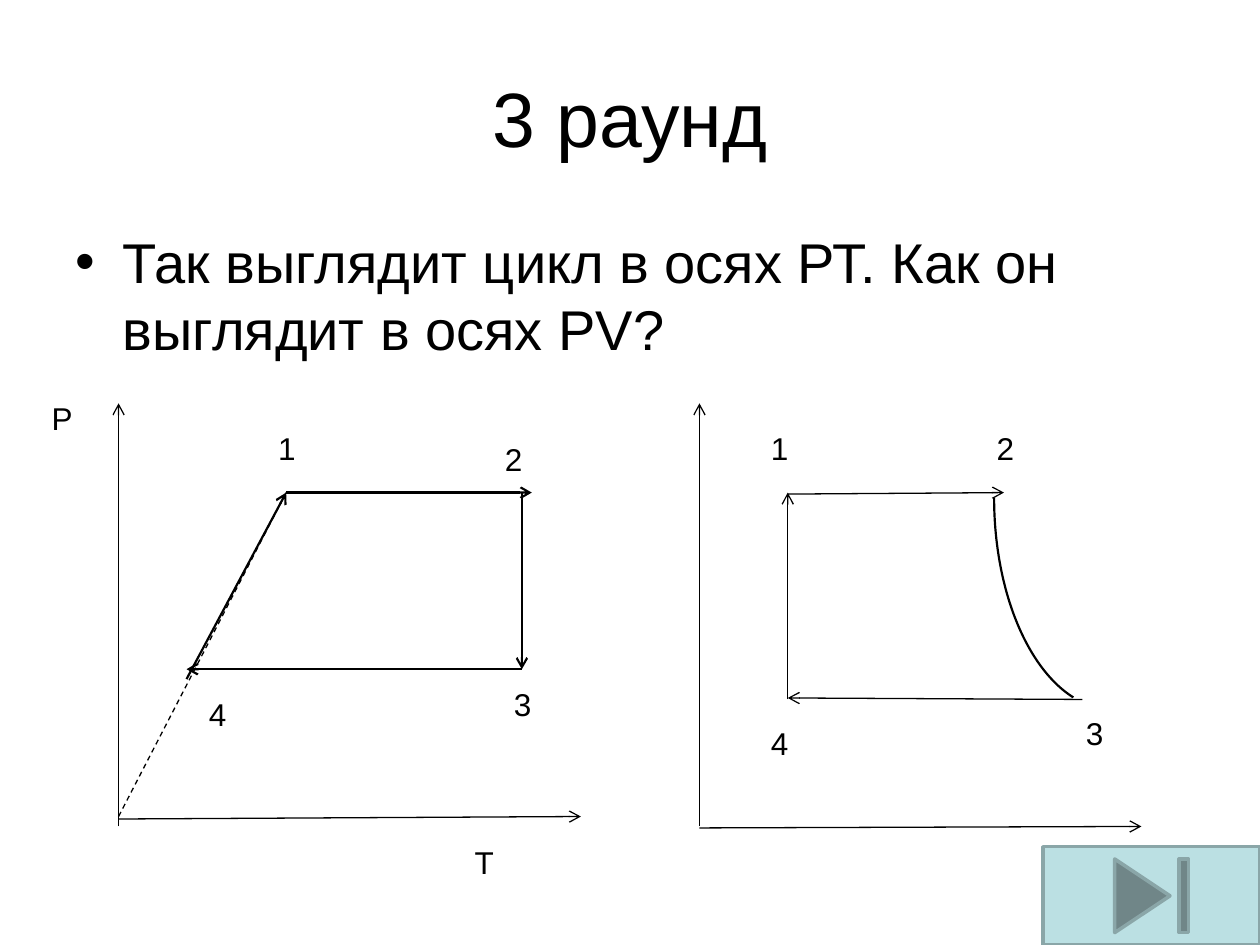
from lxml import etree
from pptx import Presentation
from pptx.dml.color import RGBColor
from pptx.enum.dml import MSO_LINE
from pptx.enum.shapes import MSO_CONNECTOR, MSO_SHAPE
from pptx.enum.text import MSO_ANCHOR, PP_ALIGN
from pptx.oxml.ns import qn
from pptx.util import Cm, Pt

STRAIGHT, DASH = MSO_CONNECTOR.STRAIGHT, MSO_LINE.DASH
ARC, BUTTON_END = MSO_SHAPE.ARC, MSO_SHAPE.ACTION_BUTTON_END
MIDDLE, TOP = MSO_ANCHOR.MIDDLE, MSO_ANCHOR.TOP
CENTER, LEFT = PP_ALIGN.CENTER, PP_ALIGN.LEFT

COLORS = {"ink": "000000", "button": "BBE0E3", "button_line": "8AA6A8"}
THIN, THICK = 0.75, 1.25

# Content, lengths in cm
TITLE = "3 раунд"
QUESTION = "Так выглядит цикл в осях РТ. Как он выглядит в осях PV?"

# Arrows: x1, y1, x2, y2, width
PT_ARROWS = [
    (2.39, 16.66, 2.39, 8.13, THIN),
    (2.39, 16.51, 11.71, 16.46, THIN),
    (3.76, 13.69, 5.77, 9.93, THICK),
    (5.77, 9.93, 10.72, 9.93, THICK),
    (10.52, 9.93, 10.52, 13.49, THICK),
    (10.52, 13.49, 3.76, 13.49, THICK),
]
PV_ARROWS = [
    (14.1, 16.66, 14.1, 8.13, THIN),
    (14.1, 16.69, 23.01, 16.66, THIN),
    (15.88, 9.96, 20.24, 9.93, THIN),
    (15.88, 14.1, 15.88, 9.93, THIN),
    (21.82, 14.1, 15.88, 14.07, THIN),
]
ORIGIN_RAY = (2.39, 16.46, 5.77, 9.93, THIN)

# Labels: text, left, top, width
LABELS = [
    ("Р", 0.79, 7.92, 1.19),
    ("Т", 9.32, 16.87, 1.98),
    ("1", 5.36, 8.53, 1.19),
    ("2", 9.93, 8.74, 1.19),
    ("3", 10.11, 13.69, 1.4),
    ("4", 3.96, 13.89, 1.19),
    ("1", 15.29, 8.53, 1.78),
    ("2", 19.84, 8.53, 1.78),
    ("3", 21.64, 14.27, 1.07),
    ("4", 15.29, 14.48, 1.78),
]
LABEL_HEIGHT = 1.02


def rgb(name):
    return RGBColor.from_string(COLORS[name])


def place(sp, *box):
    for name, value in zip(("left", "top", "width", "height"), box):
        setattr(sp, name, Cm(value))


def write(sp, text, size, align=LEFT, anchor=TOP):
    tf = sp.text_frame
    tf.word_wrap = True
    tf.vertical_anchor = anchor
    p = tf.paragraphs[0]
    p.alignment = align
    r = p.add_run()
    r.text = text
    for name, value in {"name": "Arial", "size": Pt(size)}.items():
        setattr(r.font, name, value)
    r.font.color.rgb = rgb("ink")
    return p


def outline(sp, color, width):
    sp.line.color.rgb = rgb(color)
    sp.line.width = Pt(width)


def add_line(s, x1, y1, x2, y2, width, arrow=True):
    line = s.shapes.add_connector(STRAIGHT, Cm(x1), Cm(y1), Cm(x2), Cm(y2))
    outline(line, "ink", width)
    spPr = line._element.spPr
    if arrow:
        etree.SubElement(spPr.find(qn("a:ln")), qn("a:tailEnd"), type="arrow")
    etree.SubElement(spPr, qn("a:effectLst"))
    return line


prs = Presentation()
prs.slide_width, prs.slide_height = Cm(25.4), Cm(19.05)
s = prs.slides.add_slide(prs.slide_layouts[1])

# Title and question
title, body = s.placeholders
place(title, 1.27, 0.76, 22.86, 3.18)
write(title, TITLE, 44, CENTER, MIDDLE)
place(body, 1.27, 4.45, 22.86, 2.31)
write(body, QUESTION, 32).space_before = Pt(0)

# Both diagrams
for arrow in PT_ARROWS + PV_ARROWS:
    add_line(s, *arrow)
add_line(s, *ORIGIN_RAY, arrow=False).line.dash_style = DASH

# Isotherm from 2 to 3
arc = s.shapes.add_shape(ARC, Cm(20.04), Cm(5.77), Cm(4.78), Cm(8.53))
arc.adjustments[0], arc.adjustments[1] = 168.69, 0
arc.rotation = 180
arc.fill.background()
outline(arc, "ink", THICK)
arc.shadow.inherit = False

# Axis and point labels
for text, left, top, width in LABELS:
    box = s.shapes.add_textbox(Cm(left), Cm(top), Cm(width), Cm(LABEL_HEIGHT))
    write(box, text, 18)

# Button in the corner
button = s.shapes.add_shape(BUTTON_END, Cm(21.03), Cm(17.07), Cm(4.37), Cm(1.98))
button.fill.solid()
button.fill.fore_color.rgb = rgb("button")
outline(button, "button_line", 2)
button.shadow.inherit = False

prs.save("out.pptx")
